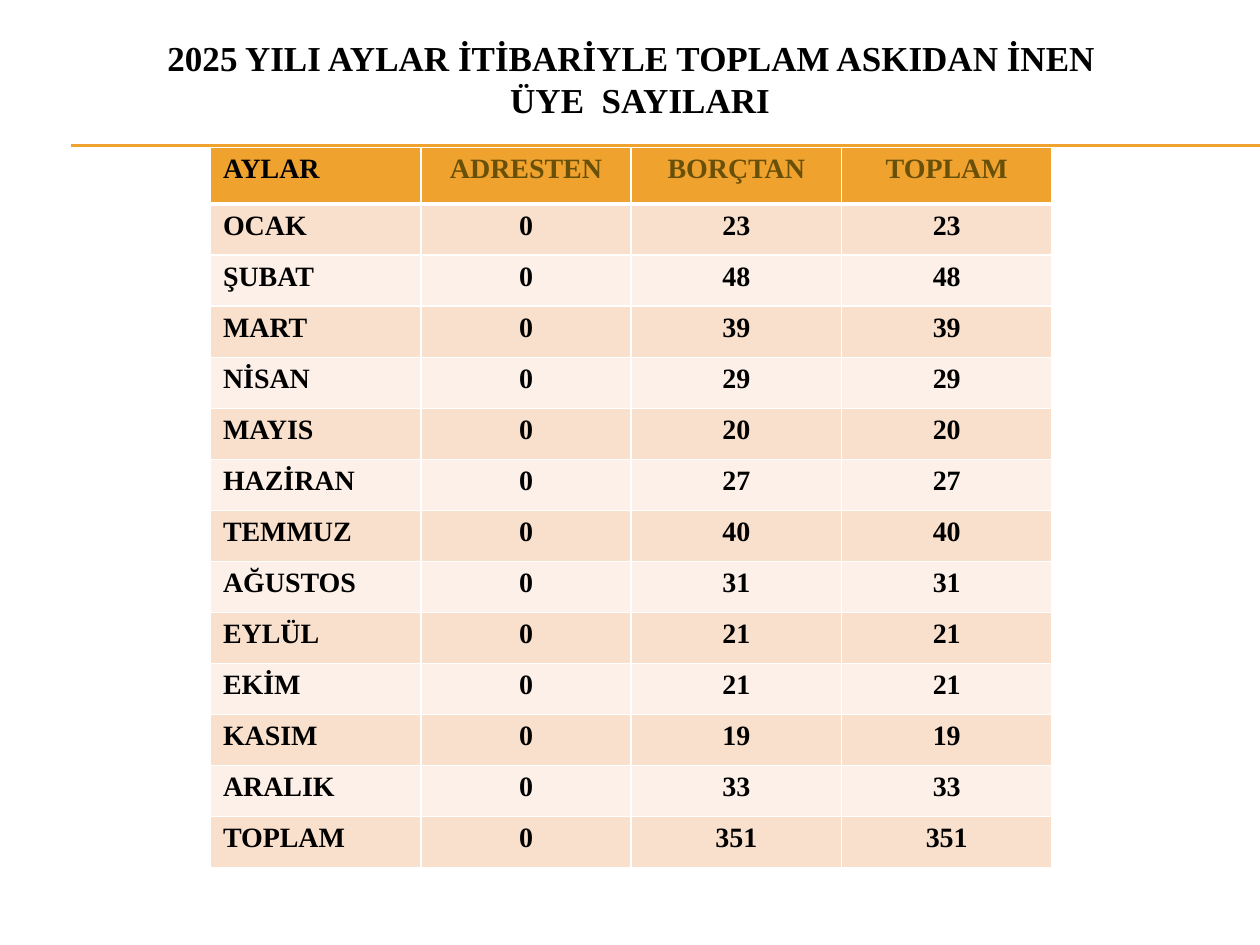
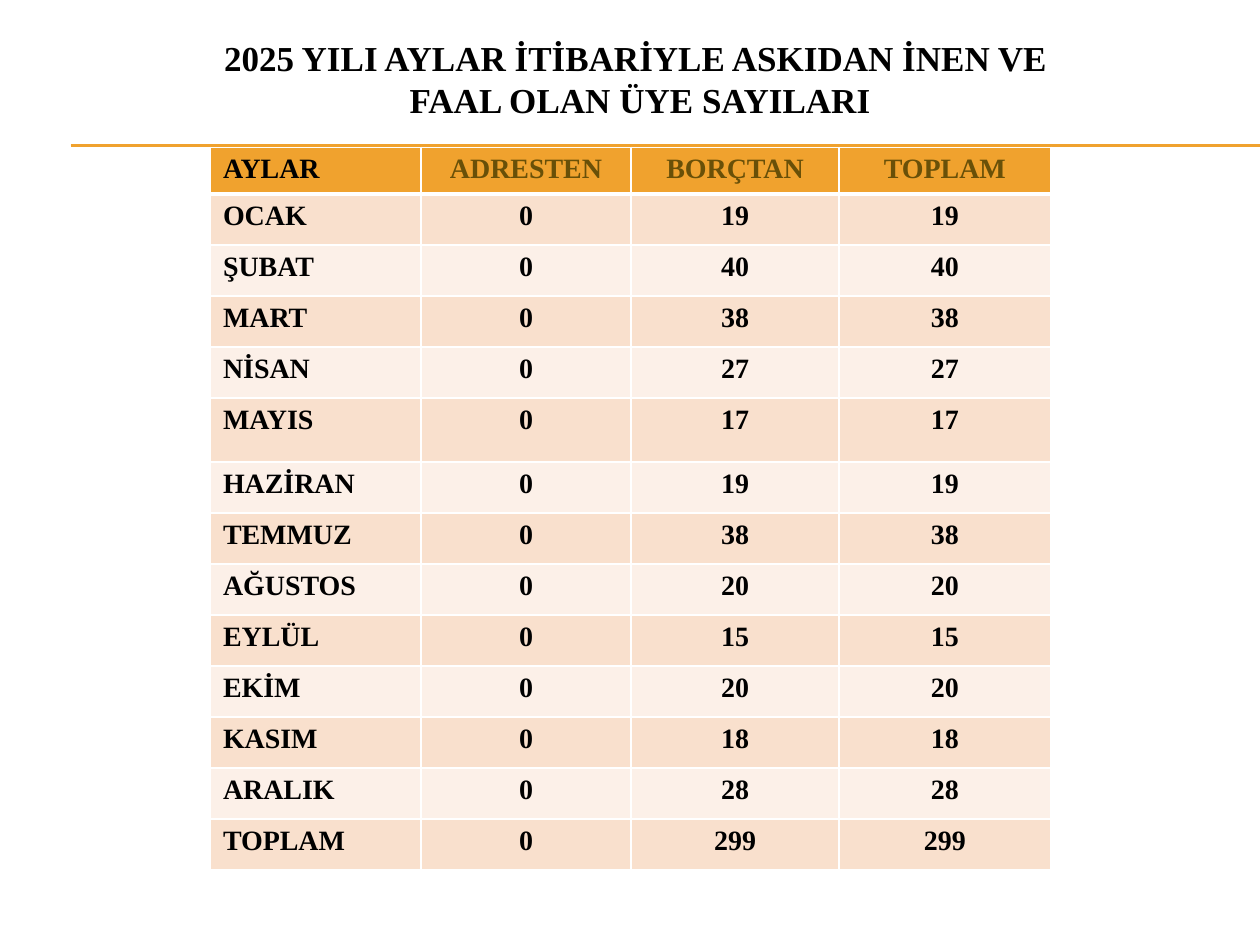
from pptx import Presentation
from pptx.dml.color import RGBColor
from pptx.enum.shapes import MSO_CONNECTOR as Link
from pptx.enum.text import MSO_ANCHOR as Anchor, PP_ALIGN as Align
from pptx.oxml.ns import qn
from pptx.util import Inches, Pt
from lxml.etree import SubElement

FONT = "Times New Roman"
BLACK = RGBColor(0x00, 0x00, 0x00)
WHITE = RGBColor(0xFF, 0xFF, 0xFF)
GOLD = RGBColor(0xF0, 0xA2, 0x2E)
OLIVE = RGBColor(0x69, 0x50, 0x08)
PEACH = RGBColor(0xF9, 0xE0, 0xCD)
CREAM = RGBColor(0xFC, 0xF0, 0xE8)

HEADS = ["AYLAR", "ADRESTEN", "BORÇTAN", "TOPLAM"]
MONTHS = ["OCAK", "ŞUBAT", "MART", "NİSAN", "MAYIS", "HAZİRAN", "TEMMUZ",
          "AĞUSTOS", "EYLÜL", "EKİM", "KASIM", "ARALIK"]
MAY = MONTHS.index("MAYIS") + 1

LIFTED = [23, 48, 39, 29, 20, 27, 40, 31, 21, 21, 19, 33]
ACTIVE = [19, 40, 38, 27, 17, 19, 38, 20, 15, 20, 18, 28]


def month_rows(debts):
    """Return header, month and total rows; no member left by address."""
    pairs = zip(MONTHS + ["TOPLAM"], debts + [sum(debts)])
    return [HEADS] + [[name, 0, debt, debt] for name, debt in pairs]


def row_sizes(total, fixed):
    """Share the height left by the fixed rows among the others."""
    count = len(MONTHS) + 2
    even = (total - sum(fixed.values())) / (count - len(fixed))
    return [fixed.get(i, even) for i in range(count)]


class Deck:
    def __init__(self):
        self.prs = Presentation()
        self.prs.slide_width = Inches(10)
        self.prs.slide_height = Inches(7.5)
        self.slide = None

    def page(self, lines):
        self.slide = self.prs.slides.add_slide(self.prs.slide_layouts[5])
        for y in (1.15, 1.16):
            self.rule(y)
        self.title(lines)

    def rule(self, y):
        line = self.slide.shapes.add_connector(
            Link.STRAIGHT, Inches(0.56), Inches(y), Inches(10), Inches(y))
        line.line.color.rgb = GOLD
        line.line.width = Pt(0.75)
        SubElement(line._element.spPr, qn("a:effectLst"))

    def text(self, para, words, size, color):
        run = para.add_run()
        run.text = words
        font = run.font
        font.name, font.size, font.bold = FONT, Pt(size), True
        font.color.rgb = color

    def title(self, lines):
        box = self.slide.shapes.title
        box.left, box.top = Inches(0.33), Inches(0.16)
        box.width, box.height = Inches(9.5), Inches(0.92)
        box.text_frame.vertical_anchor = Anchor.MIDDLE
        para = box.text_frame.paragraphs[0]
        para.alignment = Align.CENTER
        for i, words in enumerate(lines):
            if i:
                para.add_line_break()
            self.text(para, words, 20, BLACK)

    def edge(self, cell, side, width):
        props = cell._tc.get_or_add_tcPr()
        line = SubElement(props, qn(f"a:ln{side}"), w=str(Pt(width)))
        fill = SubElement(line, qn("a:solidFill"))
        SubElement(fill, qn("a:srgbClr"), val=str(WHITE))

    def cell(self, cell, row, col, value):
        thick = {(0, "B"), (1, "T")}
        for side in "LRTB":
            self.edge(cell, side, 3 if (row, side) in thick else 1)
        cell.fill.solid()
        cell.fill.fore_color.rgb = (CREAM, PEACH)[row % 2] if row else GOLD
        para = cell.text_frame.paragraphs[0]
        para.alignment = Align.CENTER if col else Align.LEFT
        self.text(para, str(value), 16, BLACK if row or not col else OLIVE)

    def table(self, rows, widths, heights):
        grid = self.slide.shapes.add_table(
            len(rows), len(widths), Inches(1.67), Inches(1.17),
            Inches(sum(widths)), Inches(sum(heights))).table
        for col, width in zip(grid.columns, widths):
            col.width = Inches(width)
        for r, (values, height) in enumerate(zip(rows, heights)):
            grid.rows[r].height = Inches(height)
            for c, value in enumerate(values):
                self.cell(grid.cell(r, c), r, c, value)


def main():
    deck = Deck()
    deck.page(["2025 YILI AYLAR İTİBARİYLE TOPLAM ASKIDAN İNEN  ",
               "ÜYE  SAYILARI"])
    deck.table(month_rows(LIFTED), [1.67] * 4, row_sizes(5.72, {0: 0.45}))

    deck.page(["2025 YILI AYLAR İTİBARİYLE ASKIDAN İNEN VE ",
               "FAAL OLAN ÜYE SAYILARI"])
    deck.table(month_rows(ACTIVE), [1.67, 1.67, 1.65, 1.68],
               row_sizes(5.74, {0: 0.37, MAY: 0.51}))
    deck.prs.save("out.pptx")


if __name__ == "__main__":
    main()
